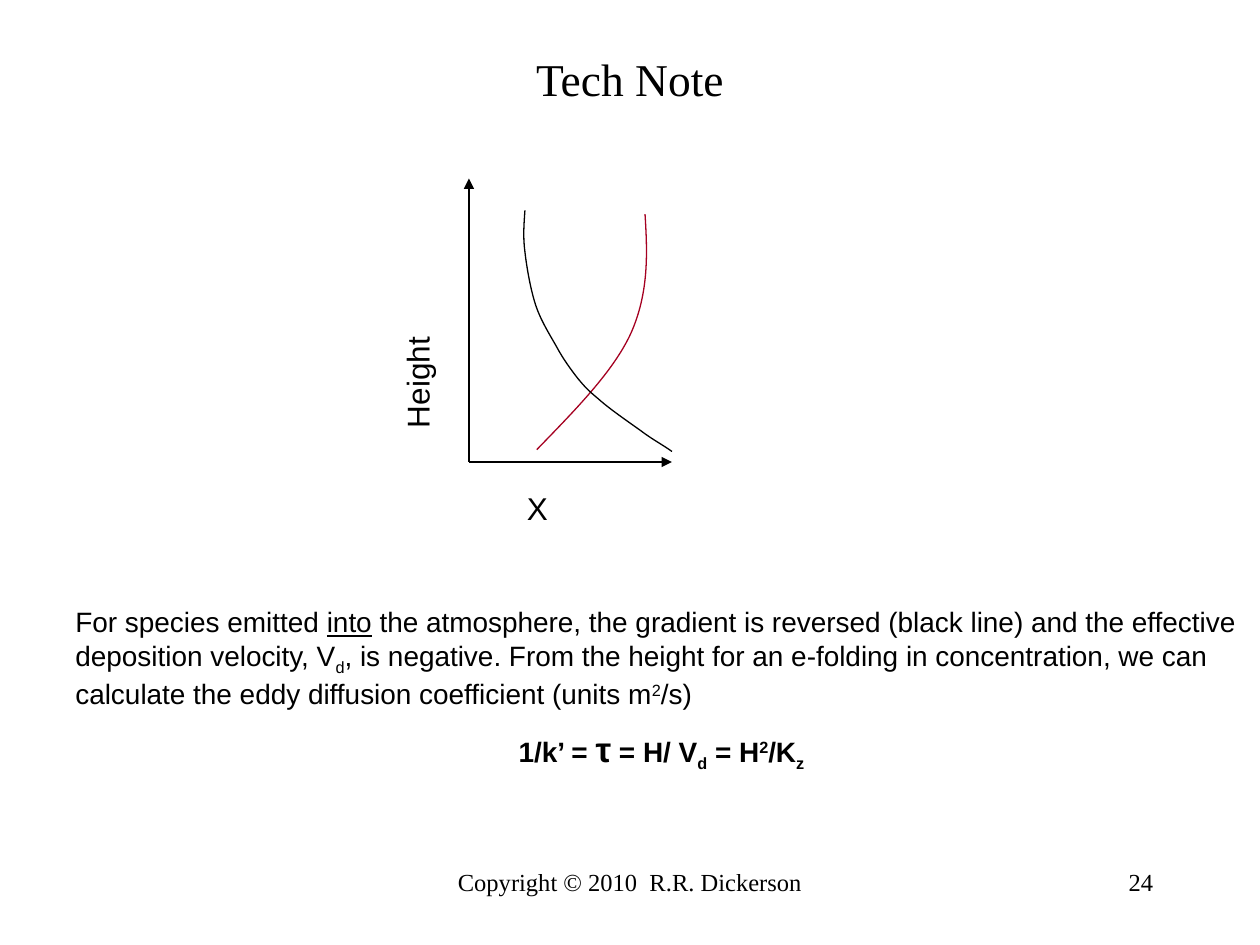
"""Build the Tech Note slide on height gradients and eddy diffusion."""
import dataclasses

import lxml.etree
import pptx
import pptx.dml.color
import pptx.enum.shapes
import pptx.enum.text
import pptx.oxml
import pptx.oxml.ns
import pptx.util

Pt = pptx.util.Pt
qn = pptx.oxml.ns.qn
Align = pptx.enum.text.PP_ALIGN
Anchor = pptx.enum.text.MSO_ANCHOR


@dataclasses.dataclass(frozen=True)
class Theme:
    ink: str = "000000"
    red: str = "A50021"
    serif: str = "Times New Roman"
    sans: str = "Arial"
    title: int = 26
    label: int = 18
    body: int = 16
    symbol: int = 20
    footer: int = 14


theme = Theme()
black = pptx.dml.color.RGBColor.from_string(theme.ink)
red = pptx.dml.color.RGBColor.from_string(theme.red)

deck = pptx.Presentation()
deck.slide_width, deck.slide_height = Pt(720), Pt(540)
page = deck.slides.add_slide(deck.slide_layouts[6])


def write(para, text, *, size=theme.body, font=theme.sans, bold=False, underline=False, baseline=0):
    span = para.add_run()
    span.text = text
    span.font.size, span.font.name = Pt(size), font
    span.font.bold, span.font.underline = bold, underline
    span.font.color.rgb = black
    if baseline:
        span.font._element.set("baseline", str(baseline * 1000))


def add_box(left, top, width, height, align=Align.LEFT, anchor=Anchor.TOP):
    box = page.shapes.add_textbox(Pt(left), Pt(top), Pt(width), Pt(height))
    box.text_frame.word_wrap = True
    box.text_frame.vertical_anchor = anchor
    box.text_frame.paragraphs[0].alignment = align
    return box


footers = [
    ("Copyright © 2010  R.R. Dickerson", 246, 228, Align.CENTER),
    ("24", 516, 150, Align.RIGHT),
]
for text, left, width, align in footers:
    footer = add_box(left, 492, width, 36, align)
    write(footer.text_frame.paragraphs[0], text, size=theme.footer, font=theme.serif)

title = add_box(54, 0, 612, 90, Align.CENTER, Anchor.MIDDLE)
write(title.text_frame.paragraphs[0], "Tech Note", size=theme.title, font=theme.serif)

axis_labels = [("X", 294, 276, 48, 0), ("Height", 177.5, 176.5, 121.7, 270)]
for text, left, top, width, rotation in axis_labels:
    label = add_box(left, top, width, 28.8)
    label.rotation = rotation
    write(label.text_frame.paragraphs[0], text, size=theme.label)

origin = (268, 264)
for tip in [(268, 102), (384, 264)]:
    axis = page.shapes.add_connector(
        pptx.enum.shapes.MSO_CONNECTOR.STRAIGHT, *map(Pt, origin + tip))
    axis.line.color.rgb = black
    axis.line.width = Pt(1)
    axis_line = axis.line._get_or_add_ln()
    axis_line.append(pptx.oxml.parse_xml(
        f'<a:tailEnd {pptx.oxml.ns.nsdecls("a")} type="triangle"/>'))
    axis._element.spPr.append(pptx.oxml.parse_xml(
        f'<a:effectLst {pptx.oxml.ns.nsdecls("a")}/>'))

deposited = [
    (368.6, 122.4), (370, 144.7), (370.8, 167), (360.7, 190.1),
    (350.6, 212.4), (328.3, 234.7), (306.7, 257),
]
emitted = [
    (300, 120.2), (299.5, 127.4), (298.8, 135.4), (300, 144),
    (301, 152.6), (303.1, 164.9), (306, 174),
    (308.9, 182.9), (313.9, 190.8), (318, 198),
    (321.8, 205.2), (326.2, 211), (330, 216),
    (334.1, 221), (336.2, 223.2), (342, 228),
    (347.8, 233.3), (359.3, 241.2), (366, 246),
    (373, 251.3), (378.7, 254.2), (384, 258),
]
for controls, color in [(deposited, red), (emitted, black)]:
    start, *others = [tuple(map(Pt, point)) for point in controls]
    builder = page.shapes.build_freeform(*start)
    builder.add_line_segments(others, close=False)
    curve = builder.convert_to_shape()
    curve.shadow.inherit = False
    curve.fill.background()
    curve.line.color.rgb = color
    curve.line.width = Pt(0.75)
    outline = next(curve._element.iter(qn("a:moveTo"))).getparent()
    segments = outline.findall(qn("a:lnTo"))
    for first in range(0, len(segments), 3):
        bend = lxml.etree.SubElement(outline, qn("a:cubicBezTo"))
        for segment in segments[first:first + 3]:
            bend.append(segment[0])
            outline.remove(segment)

subscript, superscript = {"baseline": -25}, {"baseline": 30}
explanation = [
    ("For species emitted ", {}),
    ("into", {"underline": True}),
    (" the atmosphere, the gradient is reversed (black line) and the effective "
     "deposition velocity, V", {}),
    ("d", subscript),
    (", is negative. From the height for an e-folding in concentration, we can "
     "calculate the eddy diffusion coefficient (units m", {}),
    ("2", superscript),
    ("/s)", {}),
]
equation = [
    ("1/k’ = ", {}),
    ("τ", {"size": theme.symbol}),
    (" = H/ V", {}),
    ("d", subscript),
    (" = H", {}),
    ("2", superscript),
    ("/K", {}),
    ("z", subscript),
]
body = add_box(36, 342, 684, 129.6).text_frame
for text, style in explanation:
    write(body.paragraphs[0], text, **style)
formula = body.add_paragraph()
formula.alignment = Align.CENTER
formula.space_before = Pt(9.8)
for text, style in equation:
    write(formula, text, bold=True, **style)

deck.save("out.pptx")
